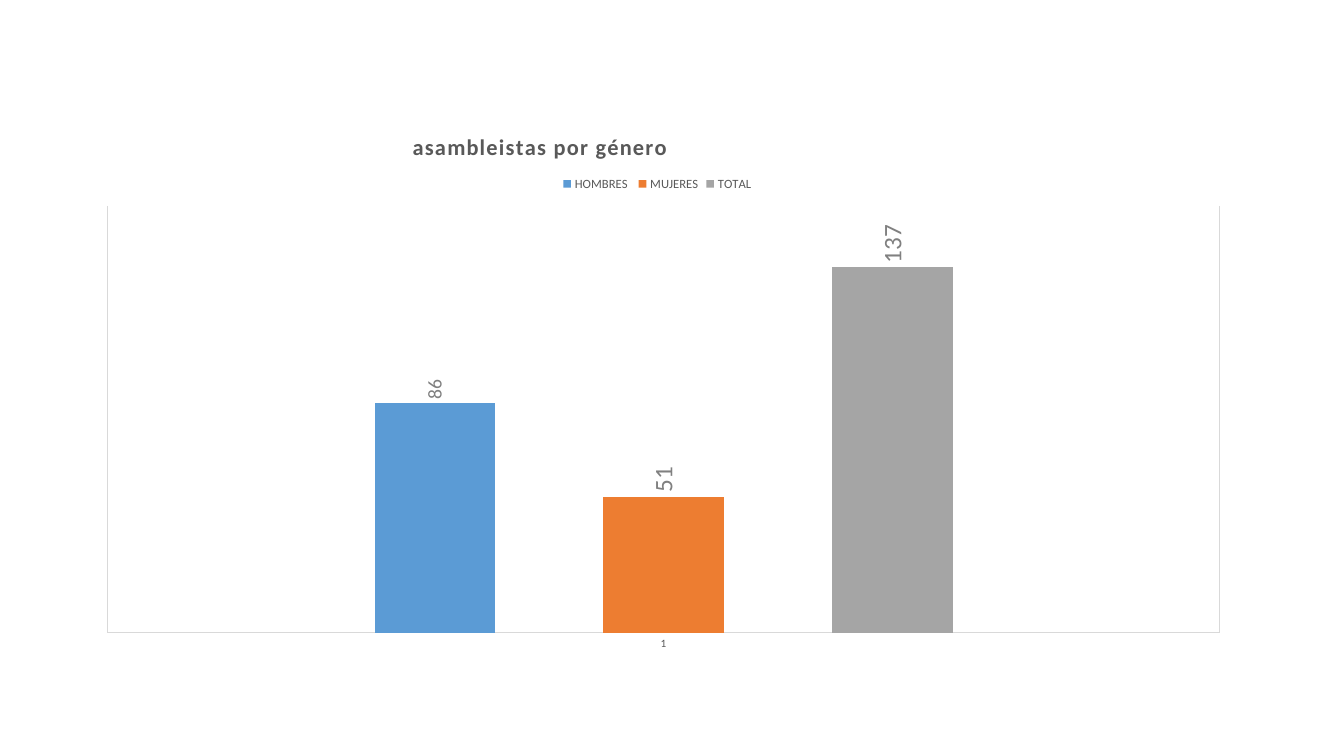
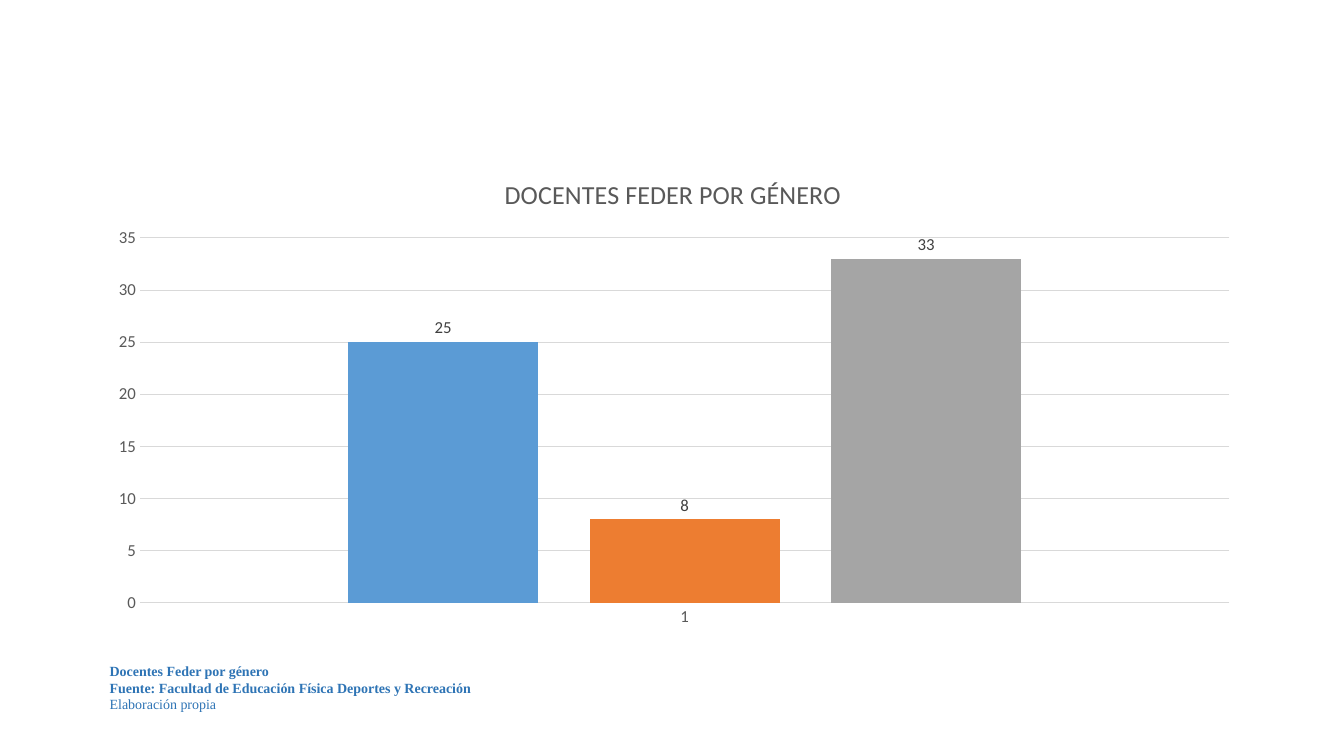
from pptx import Presentation
from pptx import util as u
from pptx.chart import data as chart_data
from pptx.dml import color as dml
from pptx.enum import chart as chart_enum
from pptx.enum import text
from pptx.oxml import ns, xmlchemy

PX = 9525
COLORS = {
    "hombres": "5B9BD5",
    "mujeres": "ED7D31",
    "total": "A5A5A5",
    "axis_text": "595959",
    "rule": "D9D9D9",
    "label_soft": "808080",
    "label_dark": "404040",
    "caption": "2E74B5",
}
SERIES_COLORS = ("hombres", "mujeres", "total")
CHART_FONT = "Calibri"
CAPTION_FONT = "Times New Roman"


def px(*lengths):
    """Turn pixel lengths into EMU."""
    return [u.Emu(length * PX) for length in lengths]


def rgb(name):
    """Return the named colour."""
    return dml.RGBColor.from_string(COLORS[name])


def style_font(font, size, color, face=CHART_FONT, bold=False):
    """Set face, size, colour and weight of a font."""
    font.name = face
    font.size = u.Pt(size)
    font.bold = bold
    font.color.rgb = rgb(color)


def style_line(line):
    """Draw a thin grey rule."""
    line.color.rgb = rgb("rule")
    line.width = u.Pt(0.75)


def set_layout(parent, index, inner=False, **fractions):
    """Place a chart part by fractions of the chart's size."""
    layout = parent.find(ns.qn("c:layout"))
    if layout is not None:
        parent.remove(layout)
    layout = xmlchemy.OxmlElement("c:layout")
    manual = xmlchemy.OxmlElement("c:manualLayout")
    settings = [("layoutTarget", "inner")] if inner else []
    settings += [(key + "Mode", "edge") for key in ("x", "y")]
    settings += list(fractions.items())
    for tag, value in settings:
        child = xmlchemy.OxmlElement("c:" + tag)
        child.set("val", str(value))
        manual.append(child)
    layout.append(manual)
    parent.insert(index, layout)


def add_column_chart(slide, box, title, title_size, series, labels, axis_size,
                     gap, overlap, plot_area, bold=False):
    """Add a clustered column chart with one category inside the box."""
    data = chart_data.CategoryChartData()
    data.categories = ["1"]
    for name, value in series:
        data.add_series(name, [value])
    chart = slide.shapes.add_chart(
        chart_enum.XL_CHART_TYPE.COLUMN_CLUSTERED, *px(*box), data).chart
    chart.font.name = CHART_FONT
    chart.font.size = u.Pt(10)
    chart.has_legend = False

    chart.has_title = True
    run = chart.chart_title.text_frame.paragraphs[0].add_run()
    run.text = title
    style_font(run.font, title_size, "axis_text", bold=bold)
    chart.chart_title.include_in_layout = False

    plot = chart.plots[0]
    plot.vary_by_categories = False
    plot.gap_width = gap
    plot.overlap = overlap
    label_sizes, label_color = labels
    for column, color, size in zip(plot.series, SERIES_COLORS, label_sizes):
        column.format.fill.solid()
        column.format.fill.fore_color.rgb = rgb(color)
        column.format.line.fill.background()
        column.data_labels.show_value = True
        column.data_labels.position = chart_enum.XL_LABEL_POSITION.OUTSIDE_END
        style_font(column.data_labels.font, size, label_color)

    for axis in (chart.category_axis, chart.value_axis):
        axis.major_tick_mark = chart_enum.XL_TICK_MARK.NONE
        axis.minor_tick_mark = chart_enum.XL_TICK_MARK.NONE
        style_font(axis.tick_labels.font, axis_size, "axis_text")
    style_line(chart.category_axis.format.line)
    chart.value_axis.format.line.fill.background()
    chart.value_axis.minimum_scale = 0
    x, y, w, h = plot_area
    set_layout(chart.element.xpath(".//c:plotArea")[0], 0, inner=True,
               x=x, y=y, w=w, h=h)
    return chart


def add_caption(slide, box, lines):
    """Add the source note, one paragraph for each line."""
    shape = slide.shapes.add_textbox(*px(*box))
    frame = shape.text_frame
    frame.word_wrap = True
    frame.auto_size = text.MSO_AUTO_SIZE.SHAPE_TO_FIT_TEXT
    for index, (line, bold) in enumerate(lines):
        paragraph = frame.add_paragraph() if index else frame.paragraphs[0]
        run = paragraph.add_run()
        run.text = line
        style_font(run.font, 10, "caption", CAPTION_FONT, bold)


def build_assembly_slide(slide):
    """Show assembly members by gender with upright labels and a legend."""
    chart = add_column_chart(
        slide, (80, 101, 1104, 528), "asambleistas por género", 16,
        [("HOMBRES ", 86), ("MUJERES", 51), ("TOTAL", 137)],
        ((14, 18, 18), "label_soft"), 8, 444, -90,
        (0.02, 0.18, 0.96, 0.77), bold=True)
    chart.value_axis.visible = False
    chart.value_axis.has_major_gridlines = False
    chart.value_axis.maximum_scale = 160
    chart.category_axis.has_major_gridlines = True
    style_line(chart.category_axis.major_gridlines.format.line)

    chart.has_legend = True
    chart.legend.position = chart_enum.XL_LEGEND_POSITION.TOP
    chart.legend.include_in_layout = False
    style_font(chart.legend.font, 9, "axis_text")
    set_layout(chart.element.xpath(".//c:legend")[0], 1, x=0.41, y=0.12)
    set_layout(chart.element.xpath(".//c:title")[0], 1, x=0.28, y=0.04)
    for properties in chart.element.xpath(".//c:title//a:rPr"):
        properties.set("spc", "100")
    for body in chart.element.xpath(".//c:dLbls/c:txPr/a:bodyPr"):
        body.set("rot", "-5400000")
        body.set("vert", "horz")


def build_teachers_slide(slide):
    """Show teachers by gender with a value axis and a source note."""
    chart = add_column_chart(
        slide, (89, 149, 1104, 457), "DOCENTES FEDER POR GÉNERO", 18.6,
        [("Series 1", 25), ("Series 2", 8), ("Series 3", 33)],
        ((12, 12, 12), "label_dark"), 12, 219, -27,
        (0.04, 0.17, 0.94, 0.76))
    chart.value_axis.maximum_scale = 35
    chart.value_axis.major_unit = 5
    chart.value_axis.has_major_gridlines = True
    style_line(chart.value_axis.major_gridlines.format.line)
    add_caption(slide, (95, 626, 1091, 59), [
        ("Docentes Feder por género", True),
        ("Fuente: Facultad de Educación Física Deportes y Recreación", True),
        ("Elaboración propia", False),
    ])


def main():
    """Build and save the presentation."""
    presentation = Presentation()
    presentation.slide_width, presentation.slide_height = px(1280, 720)
    blank = presentation.slide_layouts[6]
    for build in (build_assembly_slide, build_teachers_slide):
        build(presentation.slides.add_slide(blank))
    presentation.save("out.pptx")


if __name__ == "__main__":
    main()
